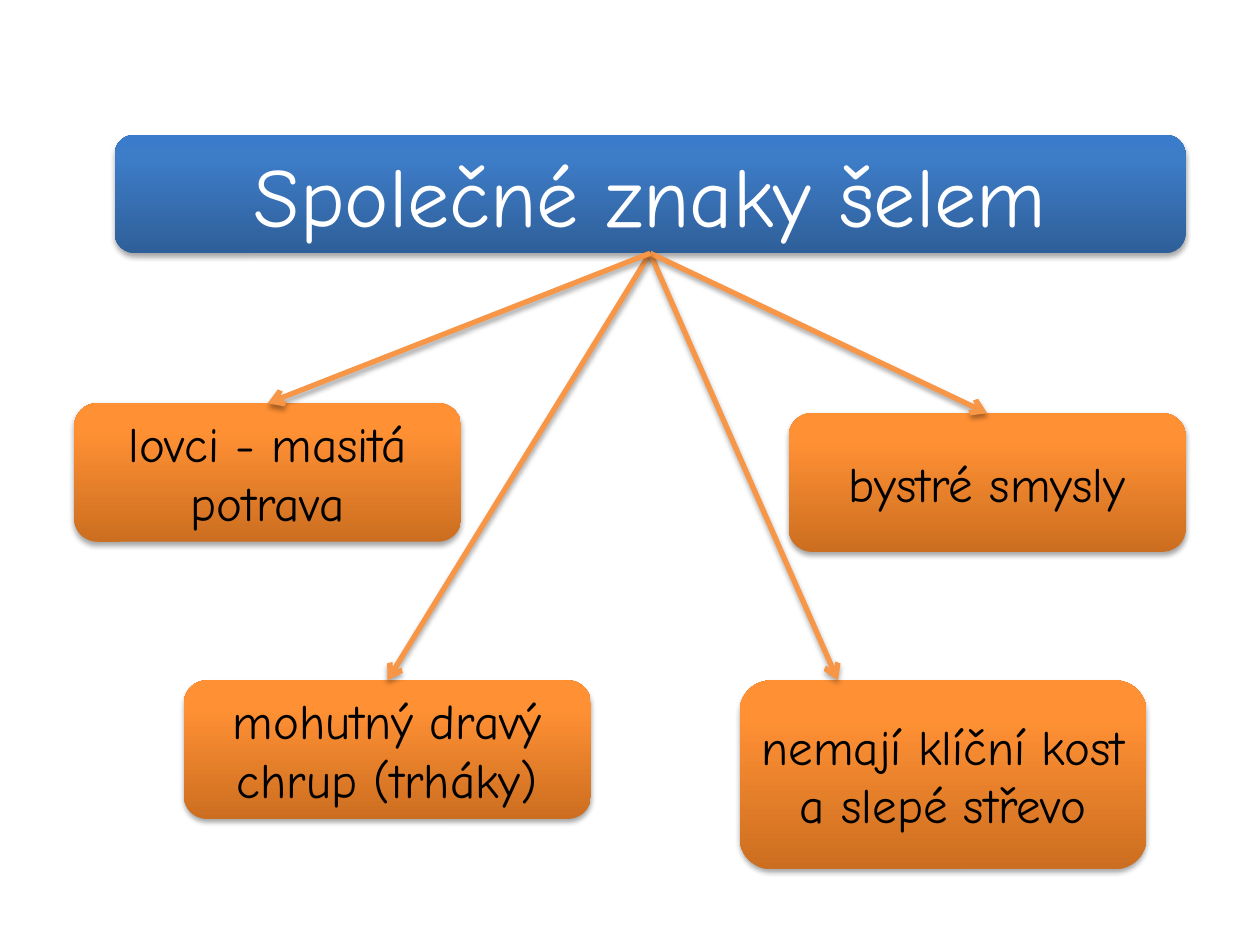
from dataclasses import dataclass
from typing import Optional

from lxml import etree
from pptx import Presentation
from pptx.dml.color import RGBColor
from pptx.enum.shapes import MSO_CONNECTOR, MSO_SHAPE
from pptx.enum.text import MSO_ANCHOR, PP_ALIGN
from pptx.oxml import parse_xml
from pptx.oxml.ns import nsdecls, qn
from pptx.util import Inches, Pt

ROUNDED = MSO_SHAPE.ROUNDED_RECTANGLE
STRAIGHT = MSO_CONNECTOR.STRAIGHT
MIDDLE = MSO_ANCHOR.MIDDLE
CENTER = PP_ALIGN.CENTER
TOP_SITE, BOTTOM_SITE = 0, 2

# The slide is a grid of 100 columns by 75 rows
WIDTH, HEIGHT = Inches(10), Inches(7.5)
COLUMN, ROW = WIDTH / 100, HEIGHT / 75

COLORS = {"arrow": "F79646", "shadow": "000000", "heading": "FFFFFF", "trait": "000000"}
GRADIENTS = {
    "heading": {0: "2F5F99", 80: "3D7CC7", 100: "3A7CCB"},
    "trait": {0: "CC6E20", 80: "FF9034", 100: "FF9136"},
}
TEXT_SIZES = {"heading": 48, "trait": 28}
FONT = "Comic Neue"


@dataclass(frozen=True)
class Box:
    text: str
    left: float
    top: float
    width: float
    height: float
    role: str = "trait"
    arrow_column: Optional[float] = None  # None: arrow meets the middle of the top


HEADING = Box("Společné znaky šelem", 9.1, 10.7, 85, 9.4, "heading")
TRAITS = [
    Box("mohutný dravý chrup (trháky)", 14.6, 54, 32.3, 11),
    Box("nemají klíční kost a slepé střevo", 58.7, 54, 32.3, 15, arrow_column=66.5),
    Box("bystré smysly", 62.6, 32.8, 31.5, 11),
    Box("lovci - masitá potrava", 5.9, 32, 30.7, 11),
]


def add_shadow(shape) -> None:
    shape._element.spPr.append(parse_xml(
        f'<a:effectLst {nsdecls("a")}>'
        f'<a:outerShdw blurRad="{Pt(3.1)}" dist="{Pt(1.8)}" dir="5400000" rotWithShape="0">'
        f'<a:srgbClr val="{COLORS["shadow"]}"><a:alpha val="35000"/></a:srgbClr>'
        '</a:outerShdw></a:effectLst>'))


def fill_upwards(shape, stops: dict[int, str]) -> None:
    """Fill with a gradient that runs from the bottom edge to the top."""
    stop_xml = "".join(f'<a:gs pos="{share * 1000}"><a:srgbClr val="{color}"/></a:gs>'
                       for share, color in stops.items())
    shape._element.spPr.find(qn("a:prstGeom")).addnext(parse_xml(
        f'<a:gradFill {nsdecls("a")} rotWithShape="1"><a:gsLst>{stop_xml}</a:gsLst>'
        '<a:lin ang="16200000" scaled="0"/></a:gradFill>'))


def add_box(slide, box: Box):
    shape = slide.shapes.add_shape(
        ROUNDED, round(box.left * COLUMN), round(box.top * ROW),
        round(box.width * COLUMN), round(box.height * ROW))
    fill_upwards(shape, GRADIENTS[box.role])
    shape.line.fill.background()
    add_shadow(shape)

    frame = shape.text_frame
    frame.word_wrap = True
    frame.vertical_anchor = MIDDLE
    paragraph = frame.paragraphs[0]
    paragraph.alignment = CENTER
    run = paragraph.add_run()
    run.text = box.text
    font_format = {"name": FONT, "size": Pt(TEXT_SIZES[box.role])}
    for attribute, value in font_format.items():
        setattr(run.font, attribute, value)
    run.font.color.rgb = RGBColor.from_string(COLORS[box.role])
    return shape


def add_arrow(slide, heading, trait, box: Box) -> None:
    column = box.left + box.width / 2 if box.arrow_column is None else box.arrow_column
    arrow = slide.shapes.add_connector(
        STRAIGHT, heading.left + heading.width // 2, heading.top + heading.height,
        round(column * COLUMN), trait.top)
    arrow.begin_connect(heading, BOTTOM_SITE)
    if box.arrow_column is None:
        arrow.end_connect(trait, TOP_SITE)
    arrow.line.color.rgb = RGBColor.from_string(COLORS["arrow"])
    arrow.line.width = Pt(3)
    etree.SubElement(arrow.line._get_or_add_ln(), qn("a:tailEnd"), type="arrow")
    add_shadow(arrow)


def main() -> None:
    presentation = Presentation()
    presentation.slide_width, presentation.slide_height = WIDTH, HEIGHT
    slide = presentation.slides.add_slide(presentation.slide_layouts[6])
    heading = add_box(slide, HEADING)
    traits = [add_box(slide, box) for box in TRAITS]
    for trait, box in zip(traits, TRAITS):
        add_arrow(slide, heading, trait, box)
    presentation.save("out.pptx")


if __name__ == "__main__":
    main()
